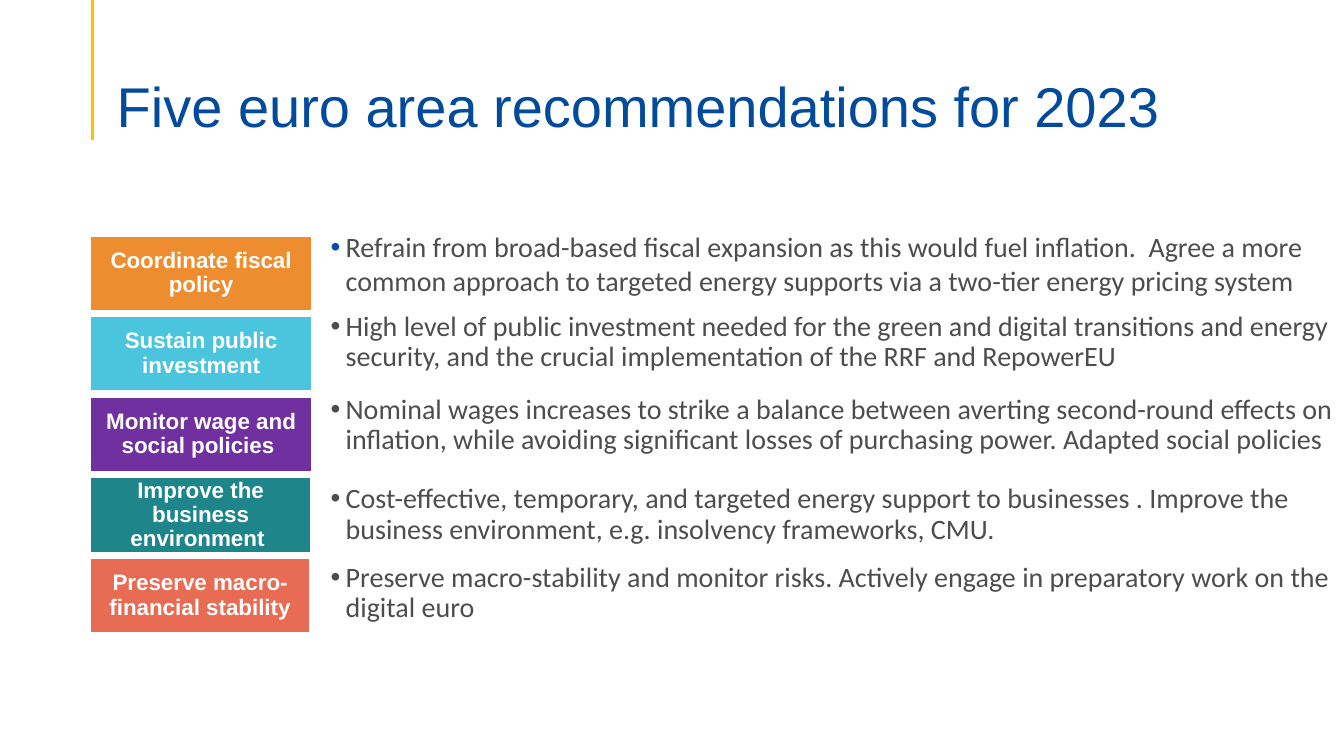
from lxml import etree
from pptx import Presentation
from pptx.dml.color import RGBColor
from pptx.enum.shapes import MSO_CONNECTOR, MSO_SHAPE
from pptx.enum.text import MSO_ANCHOR, PP_ALIGN
from pptx.oxml.ns import qn
from pptx.util import Inches, Pt

STRAIGHT = MSO_CONNECTOR.STRAIGHT
RECTANGLE = MSO_SHAPE.RECTANGLE
BOTTOM, MIDDLE, TOP = MSO_ANCHOR.BOTTOM, MSO_ANCHOR.MIDDLE, MSO_ANCHOR.TOP
CENTER = PP_ALIGN.CENTER

BLUE, GOLD, GREY, WHITE = "024B9C", "FFC000", "4D4D4D", "FFFFFF"
LABEL_LEFT, LABEL_TOP, LABEL_HEIGHT = 0.9, 2.34, 0.74
ROW_PITCH = 0.8
DETAIL_LEFT = 3.18

RECOMMENDATIONS = [
    ("Coordinate fiscal policy", "ED8D2F", 2.19,
     "Refrain from broad-based fiscal expansion as this would fuel inflation.  Agree a more "
     "common approach to targeted energy supports via a two-tier energy pricing system",
     (2.23, 10.16, 0.93), 1.0, "034EA2"),
    ("Sustain public investment", "4BC5DE", 2.19,
     "High level of public investment needed for the green and digital transitions and energy "
     "security, and the crucial implementation of the RRF and RepowerEU",
     (3.05, 10.15, 0.47), 0.9, GREY),
    ("Monitor wage and social policies ", "7030A0", 2.19,
     "Nominal wages increases to strike a balance between averting second-round effects on "
     "inflation, while avoiding significant losses of purchasing power. Adapted social policies",
     (3.87, 10.19, 0.74), 0.9, GREY),
    ("Improve the business environment ", "1E858B", 2.18,
     "Cost-effective, temporary, and targeted energy support to businesses . Improve the "
     "business environment, e.g. insolvency frameworks, CMU.",
     (4.76, 10.15, 0.65), 0.9, GREY),
    ("Preserve macro-financial stability", "E76C53", 2.17,
     "Preserve macro-stability and monitor risks. Actively engage in preparatory work on the "
     "digital euro",
     (5.54, 10.19, 0.84), 0.9, GREY),
]


def color(value):
    return RGBColor.from_string(value)


def write(frame, text, font, size, ink, bold=False, spacing=0.9, anchor=TOP,
          insets=(0.1, 0.05, 0.1, 0.05)):
    frame.word_wrap = True
    frame.vertical_anchor = anchor
    (frame.margin_left, frame.margin_top,
     frame.margin_right, frame.margin_bottom) = map(Inches, insets)
    paragraph = frame.paragraphs[0]
    paragraph.line_spacing = spacing
    run = paragraph.add_run()
    run.text = text
    run.font.name = font
    run.font.size = Pt(size)
    run.font.bold = bold
    run.font.color.rgb = color(ink)
    return paragraph


def add_bullet(paragraph, ink):
    properties = paragraph._p.get_or_add_pPr()
    properties.set("marL", str(Inches(0.15)))
    properties.set("indent", str(Inches(-0.15)))
    bullet_color = etree.SubElement(properties, qn("a:buClr"))
    etree.SubElement(bullet_color, qn("a:srgbClr"), val=ink)
    etree.SubElement(properties, qn("a:buFont"), typeface="Arial")
    etree.SubElement(properties, qn("a:buChar"), char="•")


def add_heading(slide, left, top, width, height):
    accent = slide.shapes.add_connector(
        STRAIGHT, Inches(left), Inches(0), Inches(left), Inches(top + height))
    accent.line.color.rgb = color(GOLD)
    accent.line.width = Pt(2.25)
    etree.SubElement(accent._element.spPr, qn("a:effectLst"))
    title = slide.shapes.add_textbox(
        Inches(left + 0.14), Inches(top), Inches(width), Inches(height))
    write(title.text_frame, "Five euro area recommendations for 2023", "Arial", 40, BLUE,
          anchor=BOTTOM, insets=(0.1, 0.05, 0.1, 0))


def add_label(slide, text, fill, left, top, width, height):
    label = slide.shapes.add_shape(
        RECTANGLE, Inches(left), Inches(top), Inches(width), Inches(height))
    label.shadow.inherit = False
    label.fill.solid()
    label.fill.fore_color.rgb = color(fill)
    label.line.color.rgb = color(WHITE)
    label.line.width = Pt(1)
    paragraph = write(label.text_frame, text, "Arial", 16, WHITE, bold=True,
                      anchor=MIDDLE, insets=(0.07,) * 4)
    paragraph.alignment = CENTER


def add_detail(slide, text, spacing, bullet_ink, left, top, width, height):
    detail = slide.shapes.add_textbox(
        Inches(left), Inches(top), Inches(width), Inches(height))
    paragraph = write(detail.text_frame, text, "Calibri", 20, GREY, spacing=spacing)
    add_bullet(paragraph, bullet_ink)


def add_recommendations(slide, left, top):
    for row, (name, fill, label_width, advice, advice_box, spacing,
              bullet_ink) in enumerate(RECOMMENDATIONS):
        add_label(slide, name, fill, left, top + row * ROW_PITCH, label_width, LABEL_HEIGHT)
        add_detail(slide, advice, spacing, bullet_ink, DETAIL_LEFT, *advice_box)


def main():
    deck = Presentation()
    deck.slide_width = Inches(13.33)
    deck.slide_height = Inches(7.5)
    slide = deck.slides.add_slide(deck.slide_layouts[6])
    add_heading(slide, 0.92, 0.53, 11.5, 0.86)
    add_recommendations(slide, LABEL_LEFT, LABEL_TOP)
    deck.save("out.pptx")


if __name__ == "__main__":
    main()
